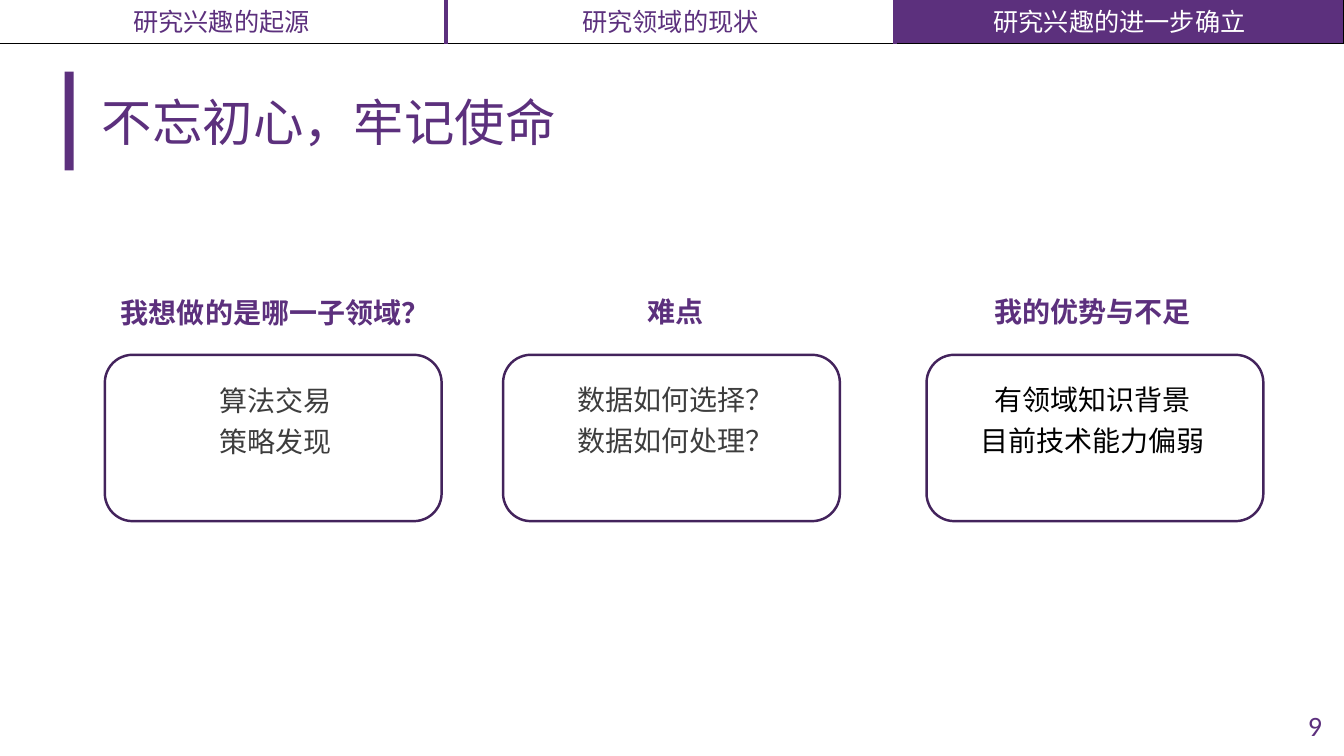
from dataclasses import dataclass

import pptx
import pptx.dml.color
import pptx.enum.shapes
import pptx.enum.text
import pptx.oxml.ns
import pptx.shapes.autoshape
import pptx.slide
import pptx.table
import pptx.text.text
import pptx.util
from lxml import etree

Inches = pptx.util.Inches
Pt = pptx.util.Pt
Align = pptx.enum.text.PP_ALIGN
Anchor = pptx.enum.text.MSO_ANCHOR

FONT = "Calibri"
PURPLE = "5C307D"
DARK_PURPLE = "43235C"
GREY = "3D3D3D"
BLACK = "000000"
WHITE = "FFFFFF"

SECTIONS = ["研究兴趣的起源", "研究领域的现状", "研究兴趣的进一步确立"]
CURRENT_SECTION = 2


@dataclass
class Topic:
    heading: str
    points: list[str]
    text_left: float
    text_top: float
    frame_left: float
    point_color: str = GREY
    indent: float = 0


TOPICS = [
    Topic("我想做的是哪一子领域？", ["算法交易", "策略发现"], 0.97, 2.92, 1.04),
    Topic("难点", ["数据如何选择？", "数据如何处理？"], 4.94, 2.91, 4.99),
    Topic("我的优势与不足", ["有领域知识背景", "目前技术能力偏弱"],
          8.9, 2.91, 9.19, BLACK, 0.35),
]


def rgb(color: str) -> pptx.dml.color.RGBColor:
    return pptx.dml.color.RGBColor.from_string(color)


def add_run(paragraph: pptx.text.text._Paragraph, text: str, size: float,
            color: str, bold: bool = False) -> None:
    run = paragraph.add_run()
    run.text = text
    run.font.name = FONT
    run.font.size = Pt(size)
    run.font.bold = bold
    run.font.color.rgb = rgb(color)


def add_round_rect(slide: pptx.slide.Slide, left: float, top: float, width: float,
                   height: float) -> pptx.shapes.autoshape.Shape:
    shape = slide.shapes.add_shape(
        pptx.enum.shapes.MSO_SHAPE.ROUNDED_RECTANGLE,
        Inches(left), Inches(top), Inches(width), Inches(height))
    shape.shadow.inherit = False
    return shape


def add_text_frame(slide: pptx.slide.Slide, left: float, top: float, width: float,
                   height: float) -> pptx.text.text.TextFrame:
    frame = slide.shapes.add_textbox(
        Inches(left), Inches(top), Inches(width), Inches(height)).text_frame
    frame.word_wrap = True
    return frame


def set_border(cell: pptx.table._Cell, side: str, color: str, width: float) -> None:
    """Draw one cell border; side is L, R, T or B, in that order."""
    qn = pptx.oxml.ns.qn
    properties = cell._tc.get_or_add_tcPr()
    line = etree.SubElement(properties, qn(f"a:ln{side}"), w=str(Pt(width)))
    fill = etree.SubElement(line, qn("a:solidFill"))
    etree.SubElement(fill, qn("a:srgbClr"), val=color)


def add_navigation(slide: pptx.slide.Slide) -> None:
    table = slide.shapes.add_table(1, len(SECTIONS), Inches(-0.03), Inches(-0.03),
                                   Inches(13.36), Inches(0.4)).table
    table.first_row = False
    table.horz_banding = False
    last = len(SECTIONS) - 1
    outer, divider = (BLACK, 1), (PURPLE, 3)
    for index, section in enumerate(SECTIONS):
        cell = table.cell(0, index)
        set_border(cell, "L", *(outer if index == 0 else divider))
        set_border(cell, "R", *(outer if index == last else divider))
        set_border(cell, "T", *outer)
        set_border(cell, "B", *outer)
        is_current = index == CURRENT_SECTION
        if is_current:
            cell.fill.solid()
            cell.fill.fore_color.rgb = rgb(PURPLE)
        else:
            cell.fill.background()
        paragraph = cell.text_frame.paragraphs[0]
        paragraph.alignment = Align.CENTER
        add_run(paragraph, section, 18, WHITE if is_current else PURPLE)


def add_title(slide: pptx.slide.Slide, text: str) -> None:
    accent = add_round_rect(slide, 0.64, 0.71, 0.09, 0.98)
    accent.adjustments[0] = 0
    accent.fill.solid()
    accent.fill.fore_color.rgb = rgb(PURPLE)
    accent.line.fill.background()

    title = slide.shapes.title
    title.left, title.top = Inches(0.91), Inches(0.65)
    title.width, title.height = Inches(11.51), Inches(1.11)
    title.text_frame.vertical_anchor = Anchor.MIDDLE
    paragraph = title.text_frame.paragraphs[0]
    paragraph.alignment = Align.LEFT
    add_run(paragraph, text, 36, PURPLE)


def add_topic(slide: pptx.slide.Slide, topic: Topic) -> None:
    border = add_round_rect(slide, topic.frame_left, 3.52, 3.34, 1.65)
    border.fill.background()
    border.line.color.rgb = rgb(DARK_PURPLE)
    border.line.width = Pt(1.75)

    frame = add_text_frame(slide, topic.text_left, topic.text_top, 3.52, 4.48)
    frame.margin_left = Inches(0.1 + topic.indent)
    for index, text in enumerate([topic.heading, *topic.points]):
        paragraph = frame.paragraphs[0] if index == 0 else frame.add_paragraph()
        paragraph.alignment = Align.CENTER
        paragraph.line_spacing = 0.9
        paragraph.space_after = Pt(6)
        if index > 0:
            paragraph.space_before = Pt(35.3 if index == 1 else 1.6)
        is_heading = index == 0
        add_run(paragraph, text, 20, PURPLE if is_heading else topic.point_color,
                is_heading)


def add_page_number(slide: pptx.slide.Slide, number: str) -> None:
    frame = add_text_frame(slide, 11.89, 7, 1.32, 0.4)
    frame.vertical_anchor = Anchor.MIDDLE
    paragraph = frame.paragraphs[0]
    paragraph.alignment = Align.RIGHT
    add_run(paragraph, number, 20, "5C2F7D")


def main() -> None:
    presentation = pptx.Presentation()
    presentation.slide_width = Inches(13.33)
    presentation.slide_height = Inches(7.5)
    slide = presentation.slides.add_slide(presentation.slide_layouts[5])
    add_navigation(slide)
    add_title(slide, "不忘初心，牢记使命")
    for topic in TOPICS:
        add_topic(slide, topic)
    add_page_number(slide, "9")
    presentation.save("out.pptx")


if __name__ == "__main__":
    main()
